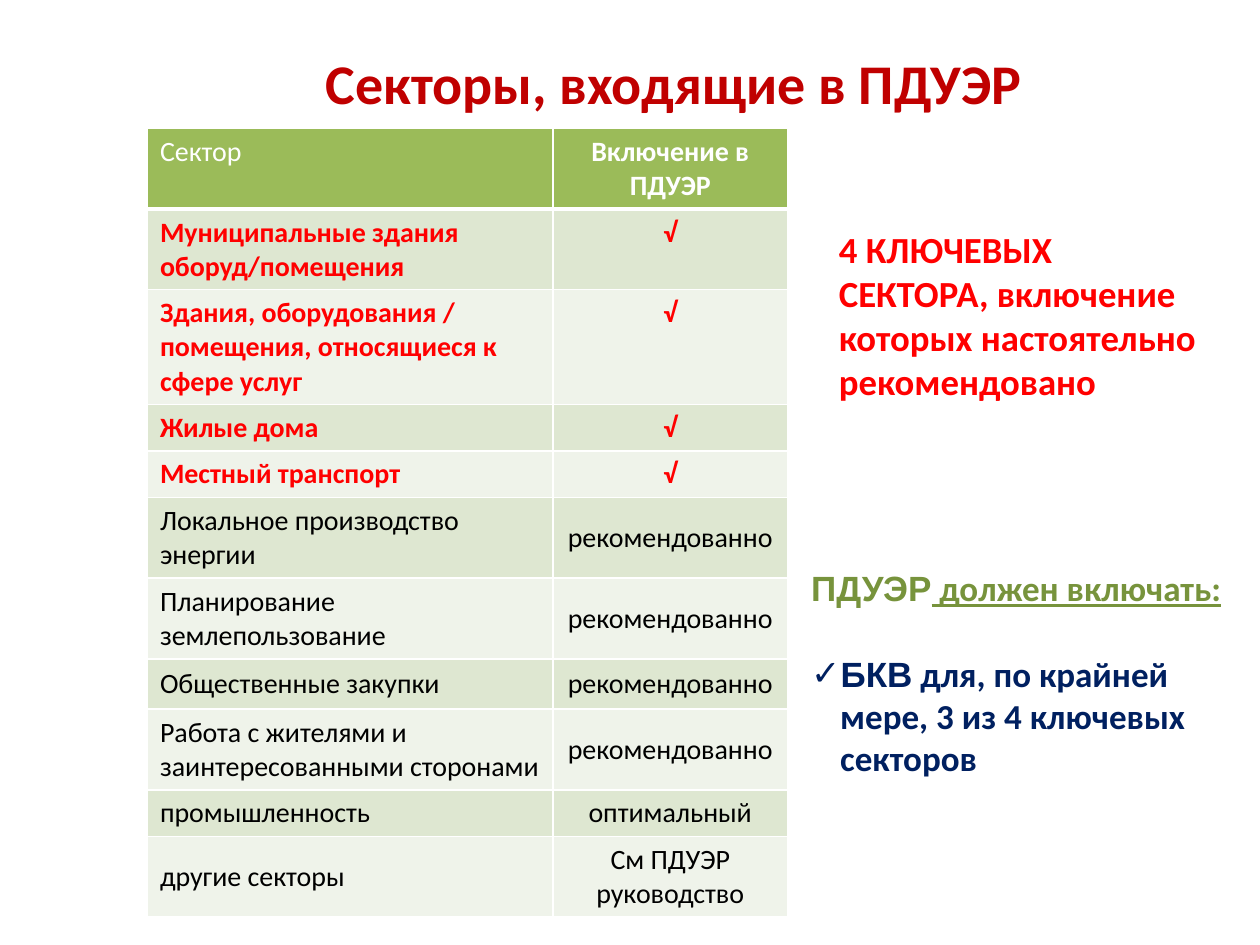
from pptx import Presentation
from pptx.dml.color import RGBColor
from pptx.enum.text import MSO_ANCHOR as Anchor, PP_ALIGN as Align
from pptx.oxml.ns import qn
from pptx.util import Inches, Pt
from lxml.etree import SubElement as Sub

RED, WHITE, BLACK = "FF0000", "FFFFFF", "000000"
HEAD, BANDS = "9BBB59", ("EFF3EA", "DEE7D1")
KEY = 4  # number of key sectors, set in red at the top of the table

# Sector, inclusion, row height
ROWS = [
    ("Сектор", "Включение в ПДУЭР", 0.64),
    ("Муниципальные здания оборуд/помещения", "√", 0.64),
    ("Здания, оборудования / помещения, относящиеся к сфере услуг", "√", 0.91),
    ("Жилые дома", "√", 0.37),
    ("Местный транспорт", "√", 0.37),
    ("Локальное производство энергии", "рекомендованно", 0.64),
    ("Планирование землепользование", "рекомендованно", 0.64),
    ("Общественные закупки", "рекомендованно", 0.4),
    ("Работа с жителями и заинтересованными сторонами", "рекомендованно", 0.64),
    ("промышленность", "оптимальный", 0.37),
    ("другие секторы", "См ПДУЭР руководство", 0.64),
]


def rgb(code):
    return RGBColor.from_string(code)


def write(para, text, size=16, color=BLACK, bold=True, face="Calibri",
          line=False, align=Align.LEFT):
    """Add one formatted run to a paragraph."""
    para.alignment = align
    run = para.add_run()
    run.text = text
    font = run.font
    font.name, font.size = face, Pt(size)
    font.bold, font.underline = bold, line
    font.color.rgb = rgb(color)


def add_box(slide, left, top, width, height):
    box = slide.shapes.add_textbox(
        Inches(left), Inches(top), Inches(width), Inches(height))
    box.text_frame.word_wrap = True
    return box.text_frame


def add_tick(para, indent):
    """Give a paragraph a check mark with a hanging indent."""
    props = para._p.get_or_add_pPr()
    props.set("marL", str(Inches(indent)))
    props.set("indent", str(-Inches(indent)))
    Sub(props, qn("a:buFont"), typeface="Arial")
    Sub(props, qn("a:buChar"), char="✓")


def add_edges(cell, top, bottom):
    """Draw white cell borders, widths in points."""
    props = cell._tc.get_or_add_tcPr()
    for side, width in (("L", 1), ("R", 1), ("T", top), ("B", bottom)):
        edge = Sub(props, qn("a:ln" + side), w=str(Pt(width)))
        fill = Sub(edge, qn("a:solidFill"))
        Sub(fill, qn("a:srgbClr"), val=WHITE)


def add_grid(slide):
    widths = (3.22, 1.86)
    table = slide.shapes.add_table(
        len(ROWS), len(widths), Inches(1.17), Inches(1.02),
        Inches(sum(widths)), Inches(sum(row[-1] for row in ROWS))).table
    for col, width in zip(table.columns, widths):
        col.width = Inches(width)

    for i, (*texts, height) in enumerate(ROWS):
        table.rows[i].height = Inches(height)
        color = WHITE if i == 0 else RED if i <= KEY else BLACK
        for j, text in enumerate(texts):
            cell = table.cell(i, j)
            add_edges(cell, 3 if i == 1 else 1, 3 if i == 0 else 1)
            cell.fill.solid()
            cell.fill.fore_color.rgb = rgb(BANDS[i % 2] if i else HEAD)
            cell.vertical_anchor = Anchor.MIDDLE if i > KEY else Anchor.TOP
            write(cell.text_frame.paragraphs[0], text, color=color,
                  bold=i <= KEY and (i, j) != (0, 0),
                  align=Align.CENTER if j else Align.LEFT)


def add_title(slide, text):
    title = slide.shapes.title
    title.left, title.top = Inches(0.7), Inches(0.27)
    title.width, title.height = Inches(9.3), Inches(0.76)
    title.text_frame.vertical_anchor = Anchor.MIDDLE
    write(title.text_frame.paragraphs[0], text, size=32, color="C00000",
          align=Align.CENTER)


def add_notes(slide):
    # Key sectors
    frame = add_box(slide, 6.56, 1.75, 3.07, 1.51)
    write(frame.paragraphs[0], "4 КЛЮЧЕВЫХ СЕКТОРА, включение которых "
          "настоятельно рекомендовано", size=21, color=RED)

    # Required content
    green, navy = "77933C", "002060"
    frame = add_box(slide, 6.34, 4.45, 3.5, 1.8)
    lead = frame.paragraphs[0]
    write(lead, "ПДУЭР", size=20, color=green, face="Arial",
          align=Align.JUSTIFY)
    write(lead, " должен включать:", size=20, color=green, line=True,
          align=Align.JUSTIFY)
    item = frame.add_paragraph()
    add_tick(item, 0.23)
    item.space_before = Pt(25)
    write(item, "БКВ", size=20, color=navy, face="Arial")
    write(item, " для, по крайней мере, 3 из 4 ключевых секторов",
          size=20, color=navy)


def main():
    deck = Presentation()
    deck.slide_width, deck.slide_height = Inches(10), Inches(7.5)
    slide = deck.slides.add_slide(deck.slide_layouts[5])
    add_notes(slide)
    add_title(slide, "Секторы, входящие в ПДУЭР")
    add_grid(slide)
    deck.save("out.pptx")


if __name__ == "__main__":
    main()
